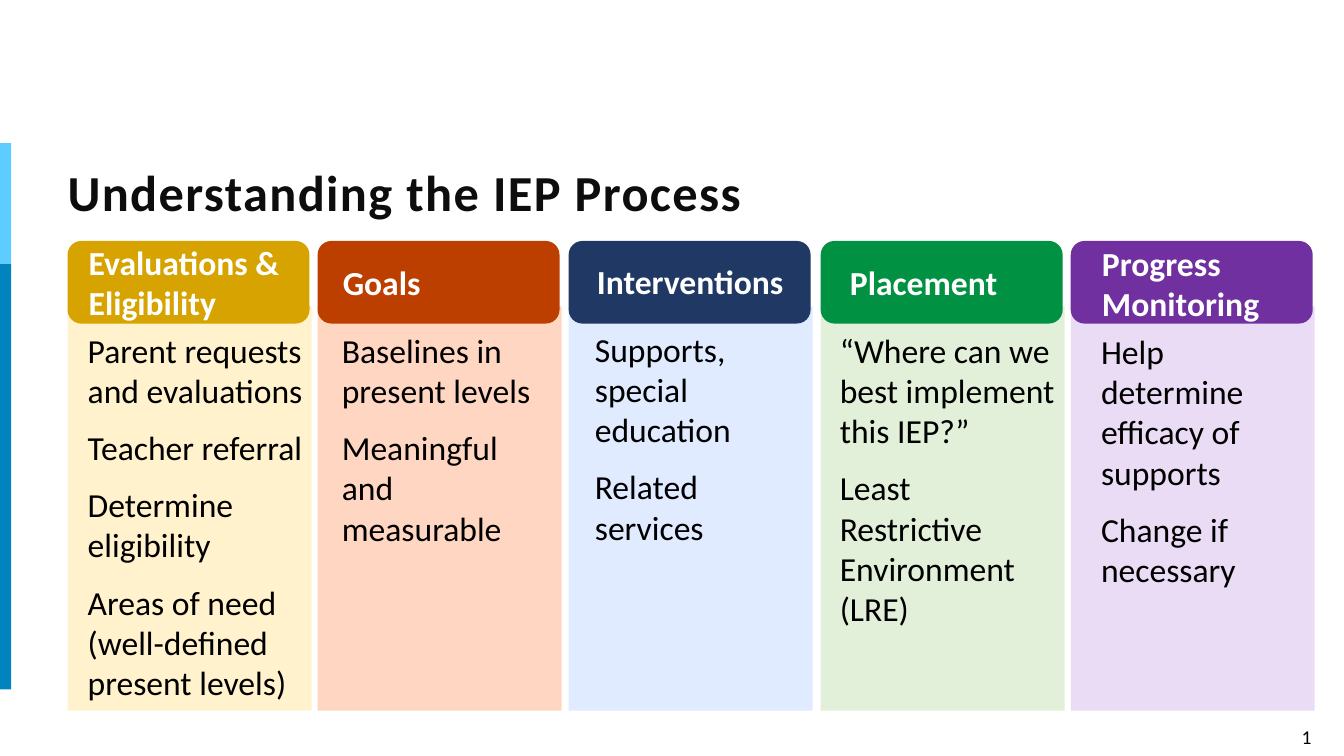
from dataclasses import dataclass

from lxml import etree
from pptx import Presentation
from pptx import util as u
from pptx.dml.color import RGBColor
from pptx.enum import shapes, text

COLORS = {
    "white": "FFFFFF", "black": "000000", "title": "0D0D0D",
    "sky": "5DCDFF", "blue": "0083BF",
}
FONT = "Calibri"
HEADING_INSETS = (0.2, 0.05, 0.1, 0.05)
BODY_INSETS = (0.1, 0.05, 0.1, 0.05)


@dataclass
class Box:
    left: float
    top: float
    width: float
    height: float

    def lengths(self) -> list:
        return [u.Inches(n) for n in (self.left, self.top, self.width, self.height)]


@dataclass
class Stage:
    heading: str
    points: list[str]
    dark: str
    light: str
    left: float
    heading_left: float
    text_left: float
    text_width: float = 2.38
    shift: float = 0.0


STAGES = [
    Stage("Evaluations & Eligibility",
          ["Parent requests and evaluations", "Teacher referral", "Determine eligibility",
           "Areas of need (well-defined present levels)"],
          "D6A300", "FFF2CC", 0.67, 0.68, 0.67, 2.53),
    Stage("Goals", ["Baselines in present levels", "Meaningful and measurable"],
          "BC3F00", "FFD6C1", 3.15, 3.2, 3.19),
    Stage("Interventions", ["Supports, special education", "Related services"],
          "203864", "E1EBFF", 5.64, 5.72, 5.7, shift=-0.01),
    Stage("Placement",
          ["“Where can we best implement this IEP?”", "Least Restrictive Environment (LRE)"],
          "009242", "E2F0D9", 8.14, 8.23, 8.13, 2.47),
    Stage("Progress Monitoring",
          ["Help determine efficacy of supports", "Change if necessary"],
          "7030A0", "EADCF4", 10.62, 10.73, 10.72, shift=0.01),
]


def set_format(target, values: dict) -> None:
    for name, value in values.items():
        setattr(target, name, value)


def add_block(slide, kind, box: Box, color: str) -> None:
    shape = slide.shapes.add_shape(kind, *box.lengths())
    shape.shadow.inherit = False
    shape.fill.solid()
    shape.fill.fore_color.rgb = RGBColor.from_string(color)
    shape.line.fill.background()


def write(shape, lines: list[str], size: int, color: str, insets: tuple,
          anchor=text.MSO_ANCHOR.TOP, bold=False, paragraph_format=None) -> None:
    frame = shape.text_frame
    margins = dict(zip(("margin_left", "margin_top", "margin_right", "margin_bottom"),
                       map(u.Inches, insets)))
    set_format(frame, {"text": "\n".join(lines), "word_wrap": True,
                       "auto_size": text.MSO_AUTO_SIZE.NONE,
                       "vertical_anchor": anchor, **margins})
    for paragraph in frame.paragraphs:
        set_format(paragraph, {"alignment": text.PP_ALIGN.LEFT, **(paragraph_format or {})})
        for run in paragraph.runs:
            set_format(run.font, {"name": FONT, "size": u.Pt(size), "bold": bold})
            run.font.color.rgb = RGBColor.from_string(color)


def add_text(slide, box: Box, *args, **options) -> None:
    write(slide.shapes.add_textbox(*box.lengths()), *args, **options)


def add_title(slide) -> None:
    title = slide.shapes.title
    set_format(title, dict(zip(("left", "top", "width", "height"),
                               Box(0.67, 1.47, 12.01, 0.82).lengths())))
    write(title, ["Understanding the IEP Process"], 36, COLORS["title"], (0, 0.2, 0.1, 0.05),
          text.MSO_ANCHOR.MIDDLE, True, {"line_spacing": 0.8})
    # Letter spacing of one point
    title.text_frame.paragraphs[0].runs[0].font._element.set("spc", "100")


def add_stage_text(slide, stage: Stage) -> None:
    add_text(slide, Box(stage.heading_left, 2.48 + stage.shift, 2.37, 0.64), [stage.heading],
             24, COLORS["white"], HEADING_INSETS, text.MSO_ANCHOR.MIDDLE, True)
    # The left inset includes the paragraph indent
    left, *others = BODY_INSETS
    add_text(slide, Box(stage.text_left, 3.22 + stage.shift, stage.text_width, 3.47),
             stage.points, 24, COLORS["black"], (left + 0.1, *others),
             paragraph_format={"space_after": u.Pt(12)})


def main() -> None:
    presentation = Presentation()
    set_format(presentation, {"slide_width": u.Inches(13.33), "slide_height": u.Inches(7.5)})
    slide = presentation.slides.add_slide(presentation.slide_layouts[5])
    rectangle = shapes.MSO_SHAPE.RECTANGLE

    # Side bars
    add_block(slide, rectangle, Box(-0.03, 1.42, 0.14, 1.21), COLORS["sky"])
    add_block(slide, rectangle, Box(-0.03, 2.62, 0.14, 4.22), COLORS["blue"])

    # Column panels, then their heading tabs
    for stage in STAGES:
        add_block(slide, rectangle, Box(stage.left, 3.04, 2.42, 4.01), stage.light)
    for stage in STAGES:
        add_block(slide, shapes.MSO_SHAPE.ROUNDED_RECTANGLE,
                  Box(stage.left, 2.39, 2.4, 0.82), stage.dark)

    # Title and column text
    add_title(slide)
    for stage in STAGES:
        add_stage_text(slide, stage)

    # Slide number as a live field
    number = slide.shapes.add_textbox(*Box(12.63, 7.14, 0.66, 0.34).lengths())
    write(number, ["3"], 14, COLORS["black"], BODY_INSETS,
          paragraph_format={"alignment": text.PP_ALIGN.CENTER})
    run = number.text_frame.paragraphs[0].runs[0]._r
    run.tag = etree.QName(run.nsmap["a"], "fld").text
    run.set("id", "{B6F15528-21DE-4FAA-801E-634DDDAF4B2B}")
    run.set("type", "slidenum")

    presentation.save("out.pptx")


if __name__ == "__main__":
    main()
